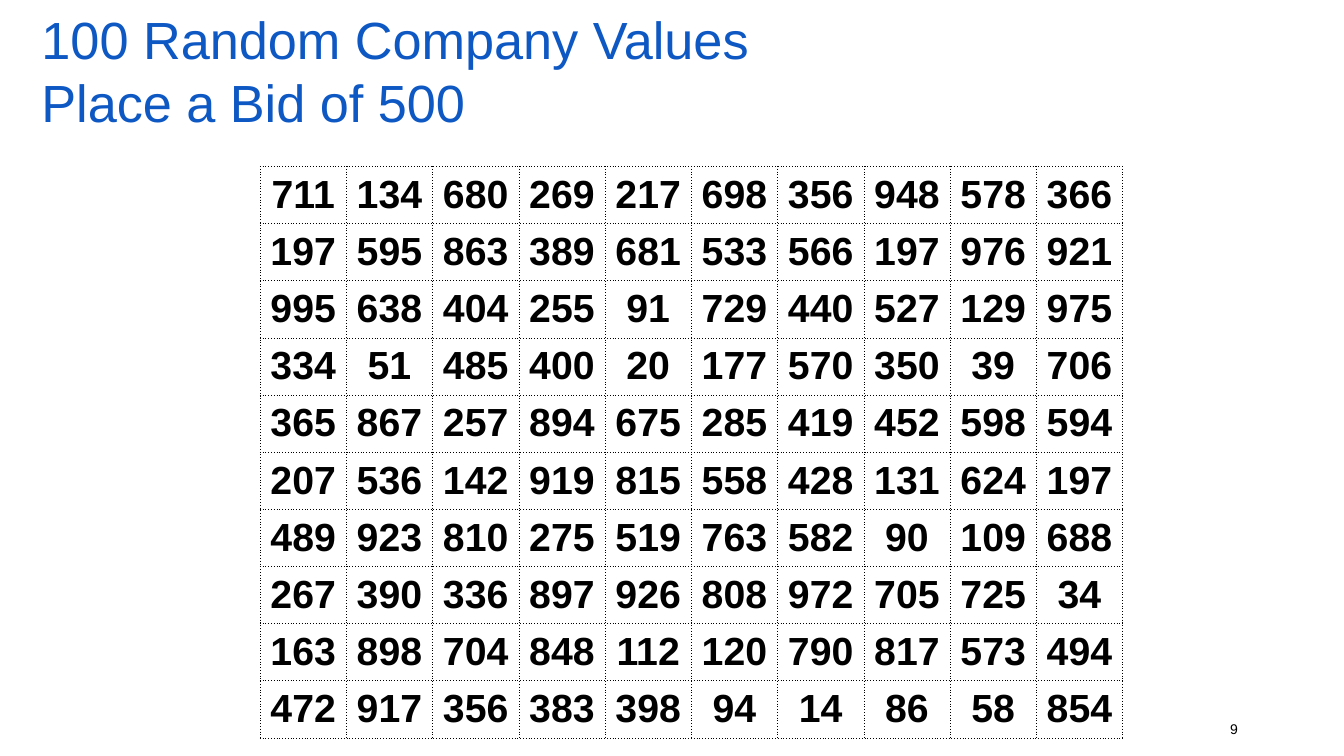
from pptx import Presentation
from pptx import util as u
from pptx.dml.color import RGBColor
from pptx.enum import text
from pptx.oxml import parse_xml
from pptx.oxml.ns import nsdecls

COLORS = {"title": "0E58C4", "ink": "000000"}
FONT = "Arial"
WIDTH = u.Inches(10)
HEIGHT = WIDTH * 9 // 16
VALUES = """
711 134 680 269 217 698 356 948 578 366
197 595 863 389 681 533 566 197 976 921
995 638 404 255 91 729 440 527 129 975
334 51 485 400 20 177 570 350 39 706
365 867 257 894 675 285 419 452 598 594
207 536 142 919 815 558 428 131 624 197
489 923 810 275 519 763 582 90 109 688
267 390 336 897 926 808 972 705 725 34
163 898 704 848 112 120 790 817 573 494
472 917 356 383 398 94 14 86 58 854
"""


def share_box(left, top, width, height):
    """Turn percentages of the slide's size into a box of lengths."""
    return [int(part * side / 100) for part, side in
            zip((left, top, width, height), (WIDTH, HEIGHT, WIDTH, HEIGHT))]


def style_text(para, size, color, align, bold=False):
    """Align a paragraph and format its runs."""
    para.alignment = align
    for span in para.runs:
        span.font.name = FONT
        span.font.size = u.Pt(size)
        span.font.bold = bold
        span.font.color.rgb = RGBColor.from_string(COLORS[color])


def add_title(page, box, words):
    """Place the two-line heading, centred vertically in its box."""
    frame = page.shapes.add_textbox(*box).text_frame
    frame.word_wrap = True
    frame.vertical_anchor = text.MSO_ANCHOR.MIDDLE
    frame.margin_top = frame.margin_bottom = u.Inches(0.1)
    para = frame.paragraphs[0]
    para.text = words
    style_text(para, 28, "title", text.PP_ALIGN.LEFT)


def add_page_number(page, box, number):
    """Place the page number at the lower right of its box."""
    frame = page.shapes.add_textbox(*box).text_frame
    frame.word_wrap = True
    frame.vertical_anchor = text.MSO_ANCHOR.BOTTOM
    frame.margin_bottom = u.Inches(0.02)
    frame.text = number
    style_text(frame.paragraphs[0], 7.5, "ink", text.PP_ALIGN.RIGHT)


def add_dotted_borders(cell):
    """Draw thin dotted lines on all four sides of a cell."""
    properties = cell._tc.get_or_add_tcPr()
    for index, side in enumerate(("lnL", "lnR", "lnT", "lnB")):
        properties.insert(index, parse_xml(
            f'<a:{side} {nsdecls("a")} w="{u.Pt(0.25)}"><a:solidFill>'
            f'<a:srgbClr val="{COLORS["ink"]}"/></a:solidFill>'
            f'<a:prstDash val="sysDot"/></a:{side}>'))


def add_value_grid(page, box, rows):
    """Fill a box with an even table of company values."""
    table = page.shapes.add_table(len(rows), len(rows[0]), *box).table
    table.first_row = table.horz_banding = False
    for column in table.columns:
        column.width = box[2] // len(rows[0])
    for row, values in zip(table.rows, rows):
        row.height = box[3] // len(rows)
        for cell, value in zip(row.cells, values):
            cell.text = value
            cell.fill.background()
            cell.vertical_anchor = text.MSO_ANCHOR.MIDDLE
            cell.margin_left = cell.margin_right = u.Pt(5)
            cell.margin_top = cell.margin_bottom = u.Pt(2.6)
            style_text(cell.text_frame.paragraphs[0], 21, "ink",
                       text.PP_ALIGN.CENTER, bold=True)
            add_dotted_borders(cell)


def main():
    """Build and save the slide."""
    deck = Presentation()
    deck.slide_width, deck.slide_height = WIDTH, HEIGHT
    page = deck.slides.add_slide(deck.slide_layouts[6])
    add_title(page, share_box(2.1, 5, 74.5, 8.5),
              "100 Random Company Values\vPlace a Bid of 500")
    add_page_number(page, share_box(70.6, 92.6, 22.5, 5.3), "9")
    rows = [line.split() for line in VALUES.strip().splitlines()]
    add_value_grid(page, share_box(19.35, 22, 64.2, 75.6), rows)
    deck.save("out.pptx")


if __name__ == "__main__":
    main()
